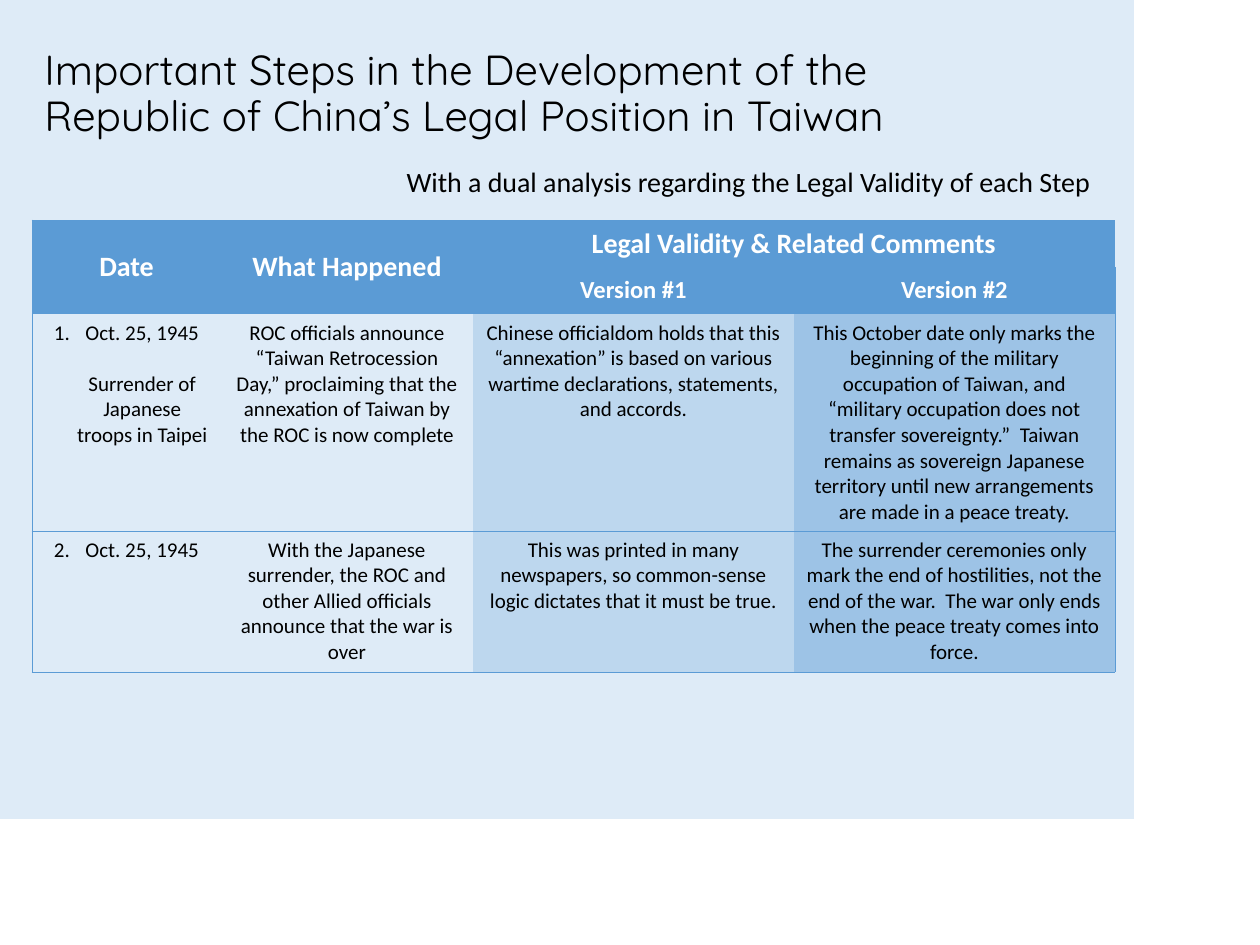
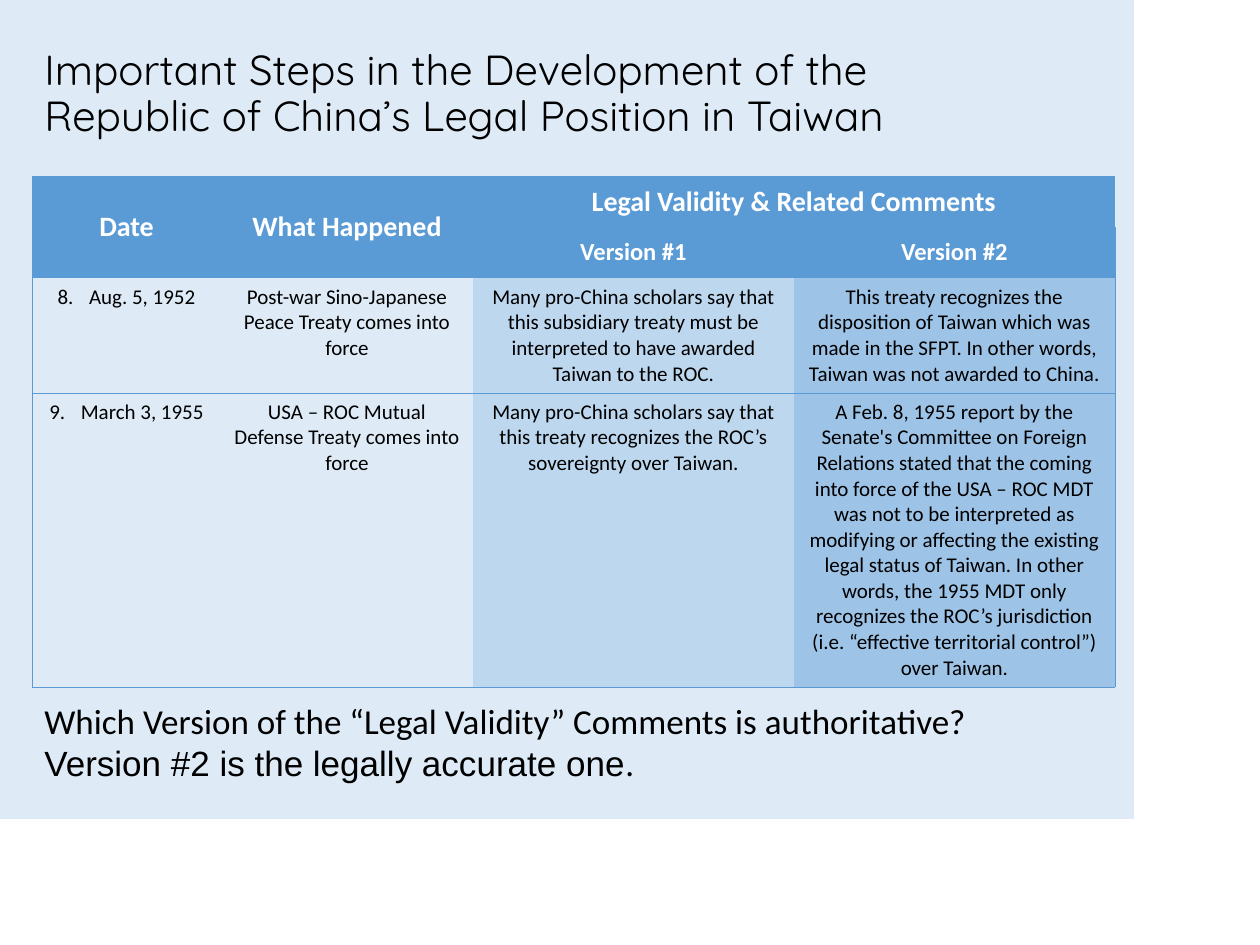
from lxml import etree
from pptx import Presentation
from pptx.dml.color import RGBColor
from pptx.enum.shapes import MSO_SHAPE
from pptx.enum.text import MSO_ANCHOR, PP_ALIGN
from pptx.oxml.ns import qn
from pptx.util import Emu, Inches, Pt

PX_PER_INCH = 126
RECTANGLE = MSO_SHAPE.RECTANGLE
TOP, MIDDLE = MSO_ANCHOR.TOP, MSO_ANCHOR.MIDDLE
LEFT, CENTER, RIGHT = PP_ALIGN.LEFT, PP_ALIGN.CENTER, PP_ALIGN.RIGHT

BLACK = RGBColor(0x00, 0x00, 0x00)
WHITE = RGBColor(0xFF, 0xFF, 0xFF)
PALE_BLUE = RGBColor(0xDE, 0xEB, 0xF7)
LIGHT_BLUE = RGBColor(0xBD, 0xD7, 0xEE)
MEDIUM_BLUE = RGBColor(0x9D, 0xC3, 0xE6)
HEADER_BLUE = RGBColor(0x5B, 0x9B, 0xD5)

BODY_FONT, TITLE_FONT, ANSWER_FONT = "Calibri", "Quicksand", "Arial"
NO_GRID_STYLE = "{2D5ABB26-0587-4C30-8999-92F81FD0307C}"
TITLE = ("Important Steps in the Development of the\v"
         "Republic of China’s Legal Position in Taiwan")
TEXT_LEFT, TEXT_WIDTH = 32, 1071
COLUMN_WIDTHS = (189, 252, 321, 321)
COLUMN_FILLS = (PALE_BLUE, PALE_BLUE, LIGHT_BLUE, MEDIUM_BLUE)
HEADERS = (("Date", "What Happened", "Legal Validity & Related Comments", ""),
           ("", "", "Version #1", "Version #2"))
HEADER_SIZES = (16, 14)
NUMBER_INDENT = Inches(0.25)

STEPS_IN_1945 = (
    (1, ("Oct. 25, 1945", "Surrender of Japanese troops in Taipei"),
     "ROC officials announce “Taiwan Retrocession Day,” proclaiming that the "
     "annexation of Taiwan by the ROC is now complete",
     "Chinese officialdom holds that this “annexation” is based on various "
     "wartime declarations, statements, and accords.",
     "This October date only marks the beginning of the military occupation of "
     "Taiwan, and “military occupation does not transfer sovereignty.”  Taiwan "
     "remains as sovereign Japanese territory until new arrangements are made "
     "in a peace treaty."),
    (2, ("Oct. 25, 1945",),
     "With the Japanese surrender, the ROC and other Allied officials announce "
     "that the war is over",
     "This was printed in many newspapers, so common-sense logic dictates that "
     "it must be true.",
     "The surrender ceremonies only mark the end of hostilities, not the end of "
     "the war.  The war only ends when the peace treaty comes into force."),
)
STEPS_IN_1950S = (
    (8, ("Aug. 5, 1952",),
     "Post-war Sino-Japanese Peace Treaty comes into force",
     "Many pro-China scholars say that this subsidiary treaty must be "
     "interpreted to have awarded Taiwan to the ROC.",
     "This treaty recognizes the disposition of Taiwan which was made in the "
     "SFPT. In other words, Taiwan was not awarded to China."),
    (9, ("March 3, 1955",),
     "USA – ROC Mutual Defense Treaty comes into force",
     "Many pro-China scholars say that this treaty recognizes the ROC’s "
     "sovereignty over Taiwan.",
     "A Feb. 8, 1955 report by the Senate's Committee on Foreign Relations "
     "stated that the coming into force of the USA – ROC MDT was not to be "
     "interpreted as modifying or affecting the existing legal status of "
     "Taiwan. In other words, the 1955 MDT only recognizes the ROC’s "
     "jurisdiction (i.e. “effective territorial control”) over Taiwan."),
)


def px(length):
    return Emu(round(length * Inches(1) / PX_PER_INCH))


def set_font(font, size, color=BLACK, name=BODY_FONT, bold=False):
    font.name, font.size, font.bold = name, Pt(size), bold
    font.color.rgb = color


def add_text_box(slide, text, top, height, size, name=BODY_FONT,
                 alignment=LEFT, anchor=TOP):
    """Add a box across the panel and return its paragraph."""
    box = slide.shapes.add_textbox(px(TEXT_LEFT), px(top), px(TEXT_WIDTH), px(height))
    frame = box.text_frame
    frame.word_wrap = True
    frame.vertical_anchor = anchor
    paragraph = frame.paragraphs[0]
    paragraph.text = text
    paragraph.alignment = alignment
    set_font(paragraph.font, size, name=name)
    return paragraph


def add_base_slide(presentation):
    """Add a blank slide with the pale panel and the shared title."""
    slide = presentation.slides.add_slide(presentation.slide_layouts[6])
    panel = slide.shapes.add_shape(RECTANGLE, 0, 0, px(1134), px(819))
    panel.shadow.inherit = False
    panel.fill.solid()
    panel.fill.fore_color.rgb = PALE_BLUE
    panel.line.fill.background()
    title = add_text_box(slide, TITLE, 32, 126, 24, TITLE_FONT, anchor=MIDDLE)
    title.line_spacing = 0.9
    return slide


def add_borders(cell, sides):
    """Draw thin blue lines on the given sides, a string of letters from LRTB."""
    properties = cell._tc.get_or_add_tcPr()
    for side in sides:
        line = etree.SubElement(properties, qn(f"a:ln{side}"), w=str(Pt(0.5)))
        fill = etree.SubElement(line, qn("a:solidFill"))
        etree.SubElement(fill, qn("a:srgbClr"), val=str(HEADER_BLUE))


def fill_cell(cell, text, fill, size, color=BLACK, bold=False, anchor=TOP):
    cell.fill.solid()
    cell.fill.fore_color.rgb = fill
    cell.vertical_anchor = anchor
    paragraph = cell.text_frame.paragraphs[0]
    paragraph.text = text
    paragraph.alignment = CENTER
    set_font(paragraph.font, size, color, bold=bold)


def fill_date_cell(cell, number, lines):
    """Write a numbered date, with an indented note below it if there is one."""
    frame = cell.text_frame
    cell.fill.solid()
    cell.fill.fore_color.rgb = COLUMN_FILLS[0]
    for index, line in enumerate(lines):
        paragraph = frame.add_paragraph() if index else frame.paragraphs[0]
        paragraph.text = line
        paragraph.alignment = CENTER
        properties = paragraph._p.get_or_add_pPr()
        properties.set("marL", str(NUMBER_INDENT))
        if index:
            properties.set("indent", "0")
            paragraph.space_before = Pt(14.6)
        else:
            properties.set("indent", str(-NUMBER_INDENT))
            etree.SubElement(properties, qn("a:buAutoNum"),
                             type="arabicPeriod", startAt=str(number))
        set_font(paragraph.font, 12)


def add_steps_table(slide, top, row_heights, steps):
    frame = slide.shapes.add_table(
        len(row_heights), len(COLUMN_WIDTHS), px(TEXT_LEFT), px(top),
        px(sum(COLUMN_WIDTHS)), px(sum(row_heights)))
    table = frame.table
    table.first_row = table.horz_banding = False
    table._tbl.tblPr.find(qn("a:tableStyleId")).text = NO_GRID_STYLE
    for column, width in zip(table.columns, COLUMN_WIDTHS):
        column.width = px(width)
    for row, height in zip(table.rows, row_heights):
        row.height = px(height)

    last_column = len(COLUMN_WIDTHS) - 1
    for row_index in range(len(row_heights)):
        for column_index in range(len(COLUMN_WIDTHS)):
            sides = "L" if column_index == 0 else ""
            sides += "R" if column_index == last_column else ""
            sides += "T" if row_index == 0 else ""
            sides += "B" if row_index >= len(HEADERS) else ""
            add_borders(table.cell(row_index, column_index), sides)

    for row_index, (labels, size) in enumerate(zip(HEADERS, HEADER_SIZES)):
        for column_index, label in enumerate(labels):
            fill_cell(table.cell(row_index, column_index), label, HEADER_BLUE,
                      size, WHITE, bold=True, anchor=MIDDLE)
    table.cell(0, 0).merge(table.cell(1, 0))
    table.cell(0, 1).merge(table.cell(1, 1))
    table.cell(0, 2).merge(table.cell(0, 3))

    for row_index, (number, date_lines, *comments) in enumerate(steps, len(HEADERS)):
        fill_date_cell(table.cell(row_index, 0), number, date_lines)
        for column_index, comment in enumerate(comments, 1):
            fill_cell(table.cell(row_index, column_index), comment,
                      COLUMN_FILLS[column_index], 12)


def add_conclusion(slide):
    question = add_text_box(
        slide, "Which Version of the “Legal Validity” Comments is authoritative?",
        693, 88, 20)
    answer = question._parent.add_paragraph()
    for text, name in (("Version #2 is the legally accurate one", ANSWER_FONT),
                       (".", BODY_FONT)):
        run = answer.add_run()
        run.text = text
        set_font(run.font, 20, name=name)


def main():
    presentation = Presentation()
    presentation.slide_width, presentation.slide_height = px(1260), px(945)

    slide = add_base_slide(presentation)
    add_steps_table(slide, 220, (47, 47, 217, 141), STEPS_IN_1945)
    add_text_box(slide, "With a dual analysis regarding the Legal Validity of each Step",
                 158, 47, 16, alignment=RIGHT)

    slide = add_base_slide(presentation)
    add_steps_table(slide, 176, (51, 51, 115, 294), STEPS_IN_1950S)
    add_conclusion(slide)

    presentation.save("out.pptx")


if __name__ == "__main__":
    main()
